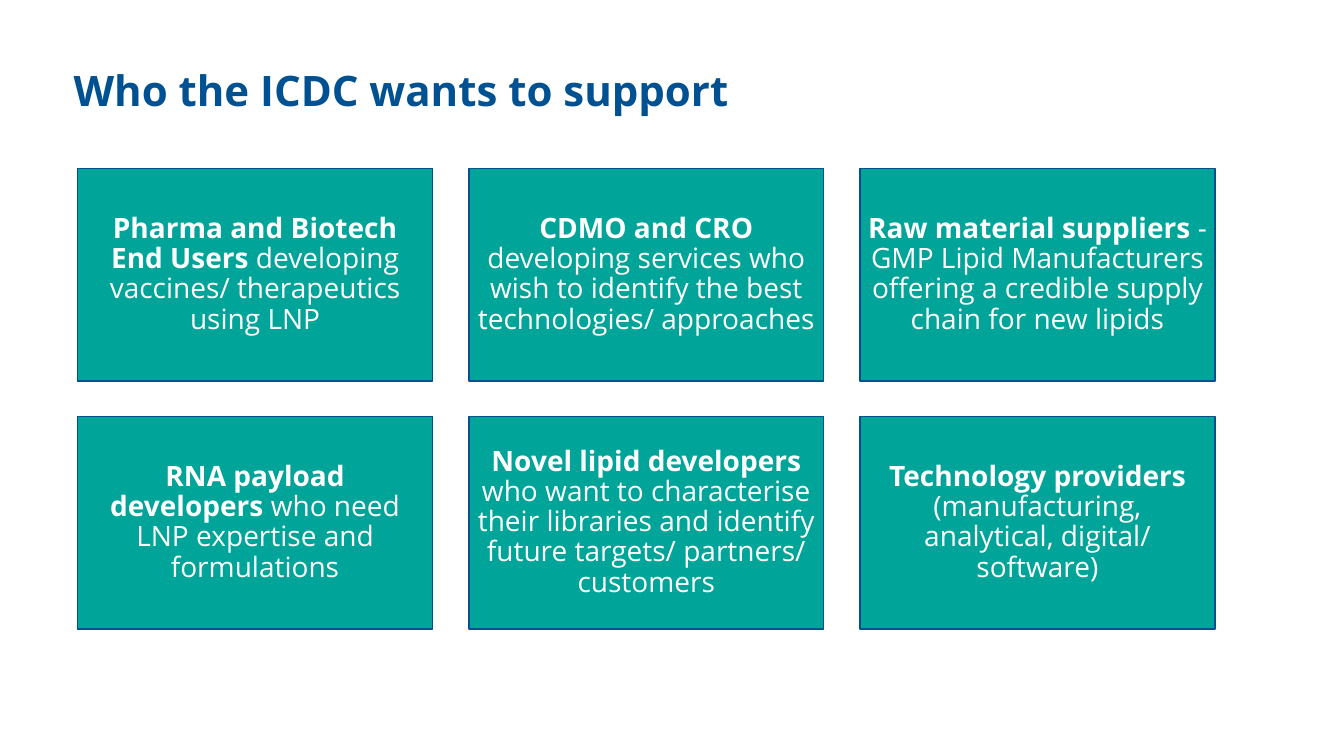
from pptx import Presentation
from pptx.dml.color import RGBColor
from pptx.enum.shapes import MSO_SHAPE
from pptx.enum.text import MSO_ANCHOR, MSO_AUTO_SIZE, PP_ALIGN
from pptx.util import Inches, Pt

RECTANGLE = MSO_SHAPE.RECTANGLE
MIDDLE = MSO_ANCHOR.MIDDLE
CENTER, LEFT = PP_ALIGN.CENTER, PP_ALIGN.LEFT
NO_AUTOFIT = MSO_AUTO_SIZE.NONE

FONT = "Open Sans"
COLORS = {"navy": "005191", "teal": "00A498", "white": "FFFFFF"}
TITLE_ONLY_LAYOUT = 5

COLUMNS = 3
CARD_WIDTH, CARD_HEIGHT = 3.52, 2.11
COLUMN_STEP, ROW_STEP = 3.88, 2.46

AUDIENCES = [
    ("Pharma and Biotech End Users", " developing vaccines/ therapeutics using LNP"),
    ("CDMO and CRO ",
     "developing services who wish to identify the best technologies/ approaches"),
    ("Raw material suppliers ",
     "- GMP Lipid Manufacturers offering a credible supply chain for new lipids"),
    ("RNA payload developers ", "who need LNP expertise and formulations"),
    ("Novel lipid developers ",
     "who want to characterise their libraries and identify future targets/ partners/ customers"),
    ("Technology providers ", "(manufacturing, analytical, digital/ software)"),
]


def color(name):
    return RGBColor.from_string(COLORS[name])


def set_frame(text_frame, margin):
    text_frame.word_wrap = True
    text_frame.auto_size = NO_AUTOFIT
    text_frame.vertical_anchor = MIDDLE
    text_frame.margin_left = text_frame.margin_right = Inches(margin)
    text_frame.margin_top = text_frame.margin_bottom = Inches(margin)


def add_run(paragraph, text, size, color_name, bold):
    run = paragraph.add_run()
    run.text = text
    run.font.name = FONT
    run.font.size = Pt(size)
    run.font.bold = bold
    run.font.color.rgb = color(color_name)


def add_title(slide, left, top, width, height):
    title = slide.shapes.title
    title.left, title.top = Inches(left), Inches(top)
    title.width, title.height = Inches(width), Inches(height)
    set_frame(title.text_frame, 0)
    paragraph = title.text_frame.paragraphs[0]
    paragraph.alignment = LEFT
    add_run(paragraph, "Who the ICDC wants to support", 30, "navy", True)


def add_card(slide, left, top, audience, description):
    card = slide.shapes.add_shape(RECTANGLE, Inches(left), Inches(top),
                                  Inches(CARD_WIDTH), Inches(CARD_HEIGHT))
    card.shadow.inherit = False
    card.fill.solid()
    card.fill.fore_color.rgb = color("teal")
    card.line.color.rgb = color("navy")
    card.line.width = Pt(1)
    set_frame(card.text_frame, 0.08)
    paragraph = card.text_frame.paragraphs[0]
    paragraph.alignment = CENTER
    paragraph.line_spacing = 0.9
    add_run(paragraph, audience, 20, "white", True)
    add_run(paragraph, description, 20, "white", False)


def add_card_grid(slide, left, top):
    for index, (audience, description) in enumerate(AUDIENCES):
        row, column = divmod(index, COLUMNS)
        add_card(slide, left + column * COLUMN_STEP, top + row * ROW_STEP,
                 audience, description)


def main():
    presentation = Presentation()
    presentation.slide_width = Inches(13.33)
    presentation.slide_height = Inches(7.5)
    slide = presentation.slides.add_slide(presentation.slide_layouts[TITLE_ONLY_LAYOUT])
    slide.background.fill.solid()
    slide.background.fill.fore_color.rgb = color("white")
    add_title(slide, 0.73, 0.63, 11.88, 0.52)
    add_card_grid(slide, 0.77, 1.67)
    presentation.save("out.pptx")


if __name__ == "__main__":
    main()
